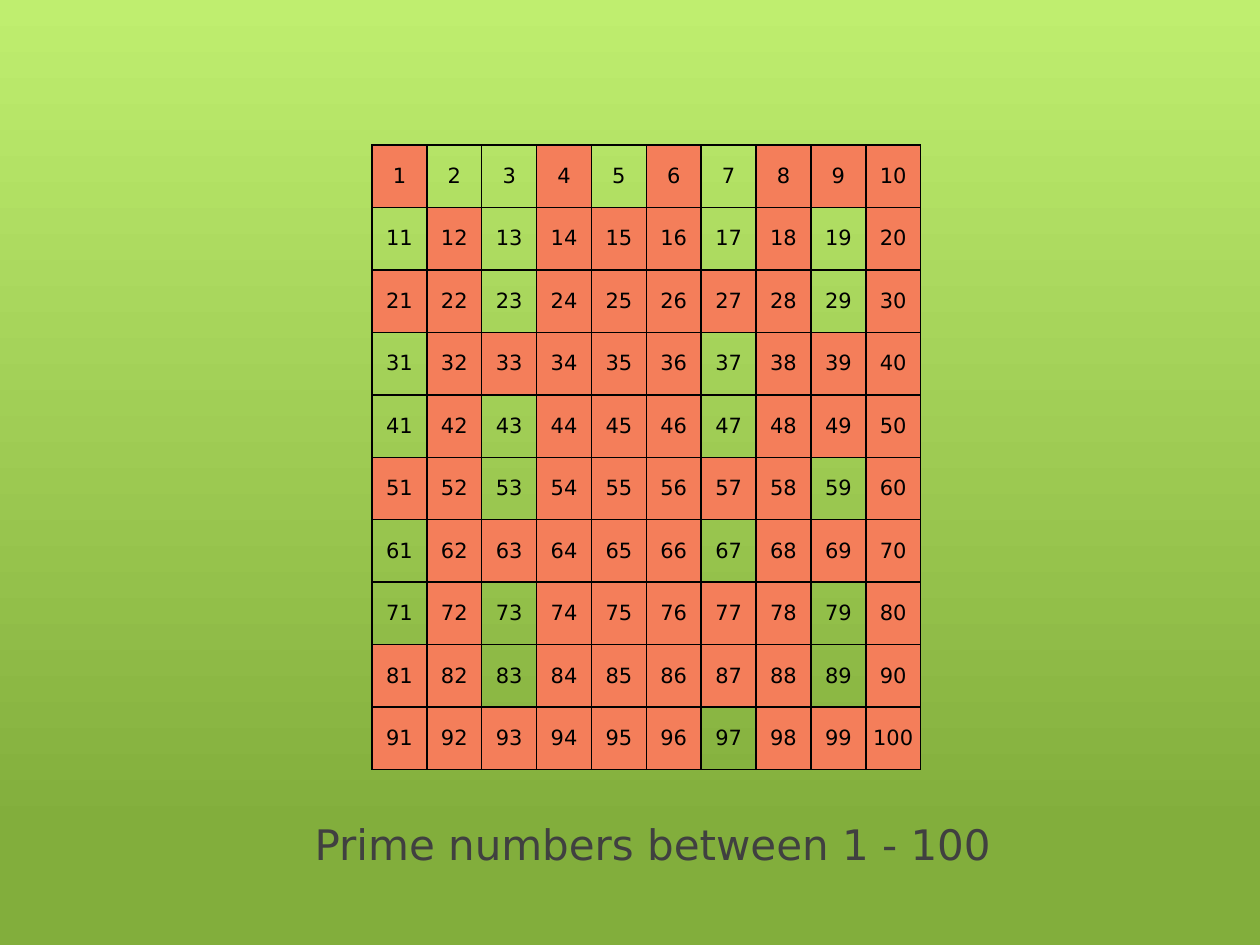
from dataclasses import dataclass
from itertools import product

from lxml.etree import SubElement
from pptx import Presentation
from pptx.dml.color import RGBColor
from pptx.enum.text import MSO_ANCHOR, PP_ALIGN
from pptx.oxml.ns import qn
from pptx.util import Emu, Pt


@dataclass(frozen=True)
class Theme:
    font: str = "DejaVu Sans"
    title_size: int = 24
    number_size: int = 12
    border_width: int = 1
    title_color: str = "404040"
    number_color: str = "000000"
    border_color: str = "000000"
    composite_fill: str = "F47E5A"
    gradient: tuple = ((0, "BFEE6F"), (0.88, "82AE3C"))


THEME = Theme()
GRID_SIZE = 10


def px(length):
    """Pixels to EMU, at 126 pixels to the inch."""
    return Emu(round(length * 914400 / 126))


def is_prime(number):
    return number > 1 and all(number % divisor for divisor in range(2, number))


def write_text(frame, text, *, size, color, align):
    frame.vertical_anchor = MSO_ANCHOR.MIDDLE
    para = frame.paragraphs[0]
    para.alignment = align
    span = para.add_run()
    span.text = text
    span.font.name = THEME.font
    span.font.size = Pt(size)
    span.font.bold = False
    span.font.color.rgb = RGBColor.from_string(color)


def paint_background(page):
    fill = page.background.fill
    fill.gradient()
    fill.gradient_angle = 270  # counter-clockwise, so top to bottom
    for stop, (position, color) in zip(fill.gradient_stops, THEME.gradient):
        stop.position = position
        stop.color.rgb = RGBColor.from_string(color)


def place_title(page, text, left, top, width, height):
    title = page.shapes.title
    title.left, title.top = px(left), px(top)
    title.width, title.height = px(width), px(height)
    title.text_frame.word_wrap = True
    write_text(title.text_frame, text, size=THEME.title_size,
               color=THEME.title_color, align=PP_ALIGN.LEFT)


def outline_cell(cell):
    properties = cell._tc.get_or_add_tcPr()
    for side in ("a:lnL", "a:lnR", "a:lnT", "a:lnB"):
        line = SubElement(properties, qn(side), w=str(Pt(THEME.border_width)))
        solid = SubElement(line, qn("a:solidFill"))
        SubElement(solid, qn("a:srgbClr"), val=THEME.border_color)


def fill_cell(cell, number):
    cell.margin_left = cell.margin_right = px(5)
    write_text(cell.text_frame, str(number), size=THEME.number_size,
               color=THEME.number_color, align=PP_ALIGN.CENTER)
    cell.vertical_anchor = MSO_ANCHOR.MIDDLE
    outline_cell(cell)
    # Primes let the background show through
    if is_prime(number):
        cell.fill.background()
    else:
        cell.fill.solid()
        cell.fill.fore_color.rgb = RGBColor.from_string(THEME.composite_fill)


def add_number_grid(page, left, top, width, height):
    table = page.shapes.add_table(GRID_SIZE, GRID_SIZE, px(left), px(top),
                                  px(width), px(height)).table
    table.first_row = table.horz_banding = False
    for row, column in product(range(GRID_SIZE), repeat=2):
        fill_cell(table.cell(row, column), row * GRID_SIZE + column + 1)


def main():
    deck = Presentation()
    deck.slide_width, deck.slide_height = px(1260), px(945)
    page = deck.slides.add_slide(deck.slide_layouts[5])

    paint_background(page)
    place_title(page, "Prime numbers between 1 - 100", 302, 780, 725, 127)
    add_number_grid(page, 372, 145, 549, 625)

    deck.save("out.pptx")


if __name__ == "__main__":
    main()
